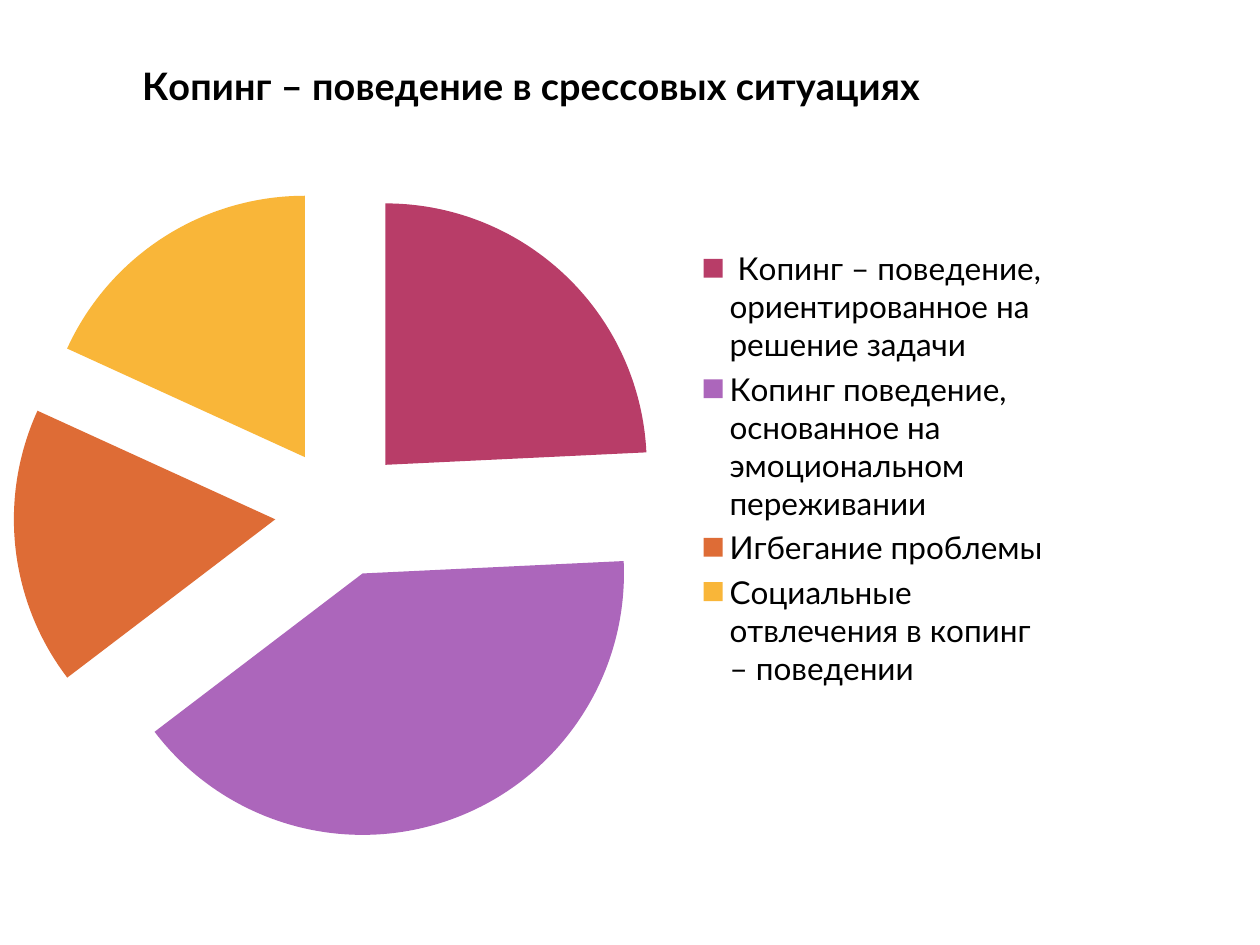
import pptx
import pptx.chart.data
import pptx.dml.color
import pptx.enum.chart
import pptx.util
from lxml import etree
from pptx.util import Inches

COLORS = {
    "text": "000000",
    "task": "B83D68",
    "emotion": "AC66BB",
    "avoidance": "DE6C36",
    "social": "F9B639",
}
TITLE = "Копинг – поведение в срессовых ситуациях"
SLICES = [
    (" Копинг – поведение, ориентированное на решение задачи", 24, "task"),
    ("Копинг поведение, основанное на эмоциональном переживании", 40, "emotion"),
    ("Игбегание проблемы", 17, "avoidance"),
    ("Социальные отвлечения в копинг – поведении", 18, "social"),
]


def rgb(name):
    return pptx.dml.color.RGBColor.from_string(COLORS[name])


def add_chart_element(parent, tag, value=None):
    element = etree.SubElement(parent, pptx.oxml.ns.qn(f"c:{tag}"))
    if value is not None:
        element.set("val", str(value))
    return element


presentation = pptx.Presentation()
presentation.slide_width = Inches(10)
presentation.slide_height = Inches(7.5)
slide = presentation.slides.add_slide(presentation.slide_layouts[6])

# Pie chart
chart_data = pptx.chart.data.CategoryChartData()
chart_data.categories = [label for label, value, color in SLICES]
chart_data.add_series(TITLE, [value for label, value, color in SLICES])
chart = slide.shapes.add_chart(
    pptx.enum.chart.XL_CHART_TYPE.PIE_EXPLODED,
    Inches(0), Inches(0.21), Inches(8.44), Inches(7.01), chart_data,
).chart
chart.font.name = "Lato"
chart.font.size = pptx.util.Pt(18)
chart.font.color.rgb = rgb("text")

# Title
chart.has_title = True
title_frame = chart.chart_title.text_frame
title_frame.text = TITLE
title_font = title_frame.paragraphs[0].font
title_font.name = "Lato"
title_font.size = pptx.util.Pt(21.6)
title_font.bold = True
title_font.color.rgb = rgb("text")

# Legend
chart.has_legend = True
chart.legend.position = pptx.enum.chart.XL_LEGEND_POSITION.RIGHT
chart.legend.include_in_layout = False

# Slice colours and explosion
plot = chart.plots[0]
plot.vary_by_categories = True
series = plot.series[0]
for index, (label, value, color) in enumerate(SLICES):
    fill = series.points[index].format.fill
    fill.solid()
    fill.fore_color.rgb = rgb(color)
for explosion in series._element.iter(pptx.oxml.ns.qn("c:explosion")):
    explosion.set("val", "25")

# Plot area as fractions of the chart
plot_area = plot._element.getparent()
for old_layout in plot_area.findall(pptx.oxml.ns.qn("c:layout")):
    plot_area.remove(old_layout)
layout = add_chart_element(plot_area, "layout")
plot_area.insert(0, layout)
manual = add_chart_element(layout, "manualLayout")
for tag, value in [
    ("layoutTarget", "inner"), ("xMode", "edge"), ("yMode", "edge"),
    ("x", 0.01), ("y", 0.18), ("w", 0.62), ("h", 0.74),
]:
    add_chart_element(manual, tag, value)

presentation.save("out.pptx")
